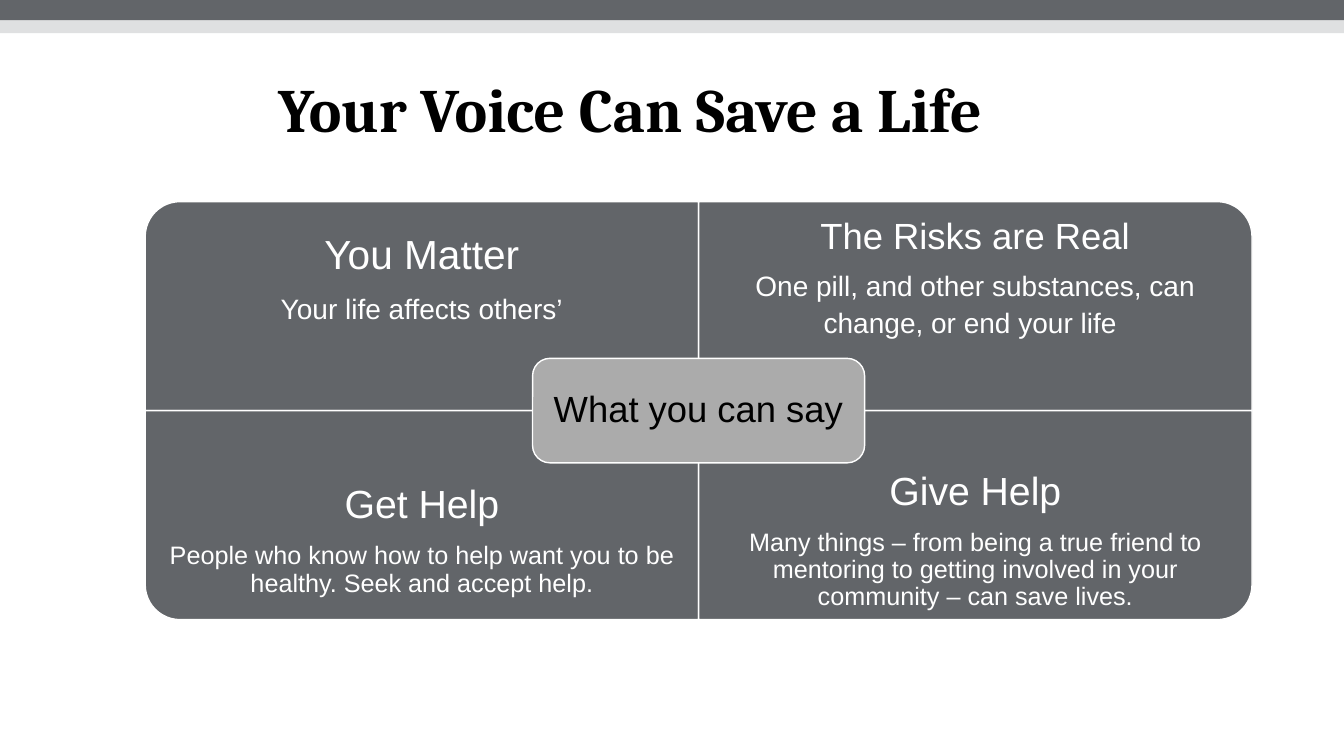
from dataclasses import dataclass

from pptx import Presentation
from pptx.dml.color import RGBColor
from pptx.enum import shapes, text
from pptx.util import Pt

TITLE = "Your Voice Can Save a Life"
CENTER = "What you can say"
# (row, column), rotation, inset, (heading, size), body runs as (text, size)
QUADRANTS = [
    ((0, 0), 270, 16.5, ("You Matter", 29), [("Your life affects others’", 20)]),
    ((0, 1), 0, 14.5, ("The Risks are Real", 26),
     [("One pill, and other substances, can change, or end your life", 20), (" ", 26)]),
    ((1, 0), 180, 16, ("Get Help", 28),
     [("People who know how to help want you to be healthy. Seek and accept help.", 18)]),
    ((1, 1), 90, 16, ("Give Help", 28),
     [("Many things – from being a true friend to mentoring to getting involved "
       "in your community – can save lives.", 18)]),
]


@dataclass(frozen=True)
class Theme:
    dark: RGBColor = RGBColor(0x62, 0x65, 0x69)
    pale: RGBColor = RGBColor(0xDF, 0xE0, 0xE1)
    middle: RGBColor = RGBColor(0xAB, 0xAB, 0xAB)
    white: RGBColor = RGBColor(0xFF, 0xFF, 0xFF)
    black: RGBColor = RGBColor(0, 0, 0)
    title_font: str = "Cambria"
    body_font: str = "Arial"
    title_size: int = 44
    center_size: int = 26


THEME = Theme()
SLIDE_WIDTH, SLIDE_HEIGHT = 960, 540
GRID_LEFT, GRID_TOP = 103.7, 144
CELL_WIDTH, CELL_HEIGHT = 395.3, 149.3
TEXT_HEIGHT = CELL_HEIGHT * 0.75
CENTER_WIDTH, CENTER_HEIGHT = CELL_WIDTH * 0.6, CELL_HEIGHT * 0.5


def add_block(slide, kind, box, fill, outlined=True):
    shape = slide.shapes.add_shape(kind, *map(Pt, box))
    shape.shadow.inherit = False
    shape.fill.solid()
    shape.fill.fore_color.rgb = fill
    if outlined:
        shape.line.color.rgb = THEME.white
        shape.line.width = Pt(1)
    else:
        shape.line.fill.background()
    return shape


def prepare_frame(shape, horizontal, vertical):
    """Wrap and vertically centre the text, with the given insets."""
    frame = shape.text_frame
    frame.word_wrap = True
    frame.vertical_anchor = text.MSO_ANCHOR.MIDDLE
    frame.margin_left = frame.margin_right = Pt(horizontal)
    frame.margin_top = frame.margin_bottom = Pt(vertical)
    return frame


def write_centered(paragraph, runs, color):
    paragraph.alignment = text.PP_ALIGN.CENTER
    paragraph.line_spacing = 0.9
    paragraph.font.name = THEME.body_font
    paragraph.font.color.rgb = color
    for words, size in runs:
        run = paragraph.add_run()
        run.text = words
        run.font.size = Pt(size)


def add_title(slide):
    box = slide.shapes.add_textbox(Pt(191.5), Pt(24.5), Pt(685.5), Pt(104.4))
    paragraph = prepare_frame(box, 7.2, 3.6).paragraphs[0]
    paragraph.text = TITLE
    font = paragraph.font
    font.name, font.size, font.bold = THEME.title_font, Pt(THEME.title_size), True
    font.color.rgb = THEME.black


def add_quadrant(slide, cell, rotation, inset, heading, body):
    row, column = cell
    left = GRID_LEFT + column * CELL_WIDTH
    top = GRID_TOP + row * CELL_HEIGHT
    width, height = CELL_WIDTH, CELL_HEIGHT
    if rotation % 180:
        width, height = height, width
    tile = add_block(slide, shapes.MSO_SHAPE.ROUND_1_RECTANGLE,
                     (left + (CELL_WIDTH - width) / 2, top + (CELL_HEIGHT - height) / 2,
                      width, height), THEME.dark)
    tile.rotation = rotation

    text_top = top + row * (CELL_HEIGHT - TEXT_HEIGHT)
    box = slide.shapes.add_textbox(*map(Pt, (left, text_top, CELL_WIDTH, TEXT_HEIGHT)))
    frame = prepare_frame(box, inset, inset)
    write_centered(frame.paragraphs[0], [heading], THEME.white)
    frame.paragraphs[0].space_after = Pt(round(heading[1] * 0.4, 1))
    write_centered(frame.add_paragraph(), body, THEME.white)


def add_center(slide):
    left = GRID_LEFT + CELL_WIDTH - CENTER_WIDTH / 2
    top = GRID_TOP + CELL_HEIGHT - CENTER_HEIGHT / 2
    label = add_block(slide, shapes.MSO_SHAPE.ROUNDED_RECTANGLE,
                      (left, top, CENTER_WIDTH, CENTER_HEIGHT), THEME.middle)
    frame = prepare_frame(label, 7.8, 7.8)
    write_centered(frame.paragraphs[0], [(CENTER, THEME.center_size)], THEME.black)


def main():
    presentation = Presentation()
    presentation.slide_width, presentation.slide_height = Pt(SLIDE_WIDTH), Pt(SLIDE_HEIGHT)
    slide = presentation.slides.add_slide(presentation.slide_layouts[6])
    for height, color in ((23.6, THEME.pale), (14.4, THEME.dark)):
        add_block(slide, shapes.MSO_SHAPE.RECTANGLE, (0, 0, SLIDE_WIDTH, height),
                  color, outlined=False)
    add_title(slide)
    for quadrant in QUADRANTS:
        add_quadrant(slide, *quadrant)
    add_center(slide)
    presentation.save("out.pptx")


if __name__ == "__main__":
    main()
